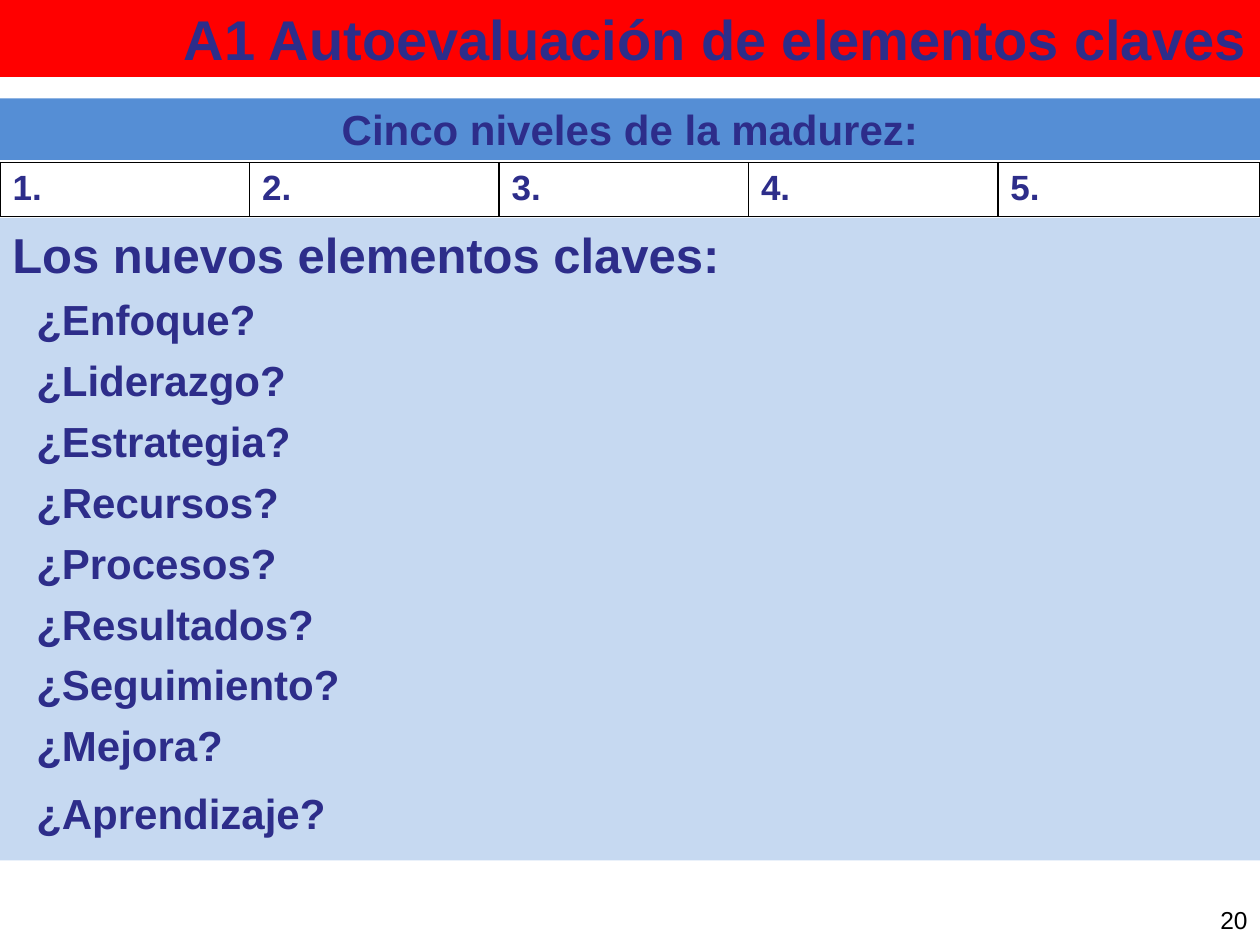
from lxml import etree
from pptx import Presentation
from pptx import util as u
from pptx.dml.color import RGBColor
from pptx.enum import shapes, text
from pptx.oxml.ns import qn

TITLE = "A1 Autoevaluación de elementos claves"
BAND = "Cinco niveles de la madurez:"
LEVELS = ["1.", "2.", "3.", "4.", "5."]
HEADING = "Los nuevos elementos claves:"
ELEMENTS = ["¿Enfoque?", "¿Liderazgo?", "¿Estrategia?", "¿Recursos?", "¿Procesos?",
            "¿Resultados?", "¿Seguimiento?", "¿Mejora?", "¿Aprendizaje?"]
PAGE_NUMBER = "20"
WIDTH, HEIGHT = 10, 7.5
LEVEL_WIDTH = 1.98
NAVY, BLACK, RED, BLUE, PALE_BLUE = "2D2D8A", "000000", "FF0000", "558ED5", "C6D9F1"
LEFT, CENTER, RIGHT = text.PP_ALIGN.LEFT, text.PP_ALIGN.CENTER, text.PP_ALIGN.RIGHT


def color(value):
    return RGBColor.from_string(value)


def place(shape, left, top, width, height):
    shape.left, shape.top = u.Inches(left), u.Inches(top)
    shape.width, shape.height = u.Inches(width), u.Inches(height)


def fill(shape, value):
    shape.fill.solid()
    shape.fill.fore_color.rgb = color(value)


def style(paragraph, size, align=LEFT, value=NAVY, bold=True):
    paragraph.alignment = align
    for run in paragraph.runs:
        run.font.name, run.font.size, run.font.bold = "Arial", u.Pt(size), bold
        run.font.color.rgb = color(value)


def space(paragraph, margin, indent):
    paragraph.space_before = paragraph.space_after = u.Pt(3)
    properties = paragraph._p.get_or_add_pPr()
    properties.set("marL", str(u.Inches(margin)))
    properties.set("indent", str(u.Inches(indent)))


def add_panel(slide, top, height, value, anchor):
    panel = slide.shapes.add_shape(shapes.MSO_SHAPE.RECTANGLE, 0, u.Inches(top),
                                   u.Inches(WIDTH), u.Inches(height))
    panel.shadow.inherit = False
    panel.line.fill.background()
    fill(panel, value)
    panel.text_frame.word_wrap = True
    panel.text_frame.vertical_anchor = anchor
    return panel.text_frame


def add_borders(cell):
    properties = cell._tc.get_or_add_tcPr()
    for position, side in enumerate(("a:lnL", "a:lnR", "a:lnT", "a:lnB")):
        line = etree.Element(qn(side), w=str(u.Pt(1)))
        solid = etree.SubElement(line, qn("a:solidFill"))
        etree.SubElement(solid, qn("a:srgbClr"), val=BLACK)
        properties.insert(position, line)


def add_title(slide):
    title = slide.shapes.title
    place(title, 0, 0, WIDTH, 0.61)
    fill(title, RED)
    title.text_frame.text = TITLE
    title.text_frame.vertical_anchor = text.MSO_ANCHOR.MIDDLE
    title.text_frame.auto_size = text.MSO_AUTO_SIZE.NONE
    style(title.text_frame.paragraphs[0], 32, RIGHT)


def add_elements(slide):
    frame = add_panel(slide, 1.73, 5.1, PALE_BLUE, text.MSO_ANCHOR.TOP)
    frame.text = "\n".join([HEADING] + ELEMENTS)
    heading, *items = frame.paragraphs
    style(heading, 28)
    space(heading, 0.46, -0.46)
    for paragraph in items:
        paragraph.level = 1
        style(paragraph, 24)
        space(paragraph, 0.58, -0.39)
    tail = items[-1].add_run()
    tail.text = " "
    tail.font.size = u.Pt(28)


def add_band(slide):
    frame = add_panel(slide, 0.78, 0.49, BLUE, text.MSO_ANCHOR.MIDDLE)
    frame.text = BAND
    style(frame.paragraphs[0], 24, CENTER)
    space(frame.paragraphs[0], 0.46, -0.46)


def add_levels(slide):
    table = slide.shapes.add_table(1, len(LEVELS), 0, u.Inches(1.29),
                                   u.Inches(WIDTH), u.Inches(0.43)).table
    table.first_row = table.horz_banding = False
    last = len(LEVELS) - 1
    for index, label in enumerate(LEVELS):
        width = WIDTH - last * LEVEL_WIDTH if index == last else LEVEL_WIDTH
        table.columns[index].width = u.Inches(width)
        cell = table.cell(0, index)
        cell.text_frame.text = label
        cell.fill.background()
        style(cell.text_frame.paragraphs[0], 20)
        add_borders(cell)


def add_page_number(slide):
    box = slide.shapes.add_textbox(u.Inches(6.83), u.Inches(7.1), u.Inches(3.17), u.Inches(0.4))
    box.text_frame.word_wrap = True
    box.text_frame.vertical_anchor = text.MSO_ANCHOR.MIDDLE
    box.text_frame.text = PAGE_NUMBER
    style(box.text_frame.paragraphs[0], 14, RIGHT, BLACK, False)


def main():
    """Build the self-assessment slide on the five maturity levels."""
    presentation = Presentation()
    presentation.slide_width, presentation.slide_height = u.Inches(WIDTH), u.Inches(HEIGHT)
    slide = presentation.slides.add_slide(presentation.slide_layouts[5])
    for add_part in (add_title, add_elements, add_band, add_levels, add_page_number):
        add_part(slide)
    presentation.save("out.pptx")


if __name__ == "__main__":
    main()
